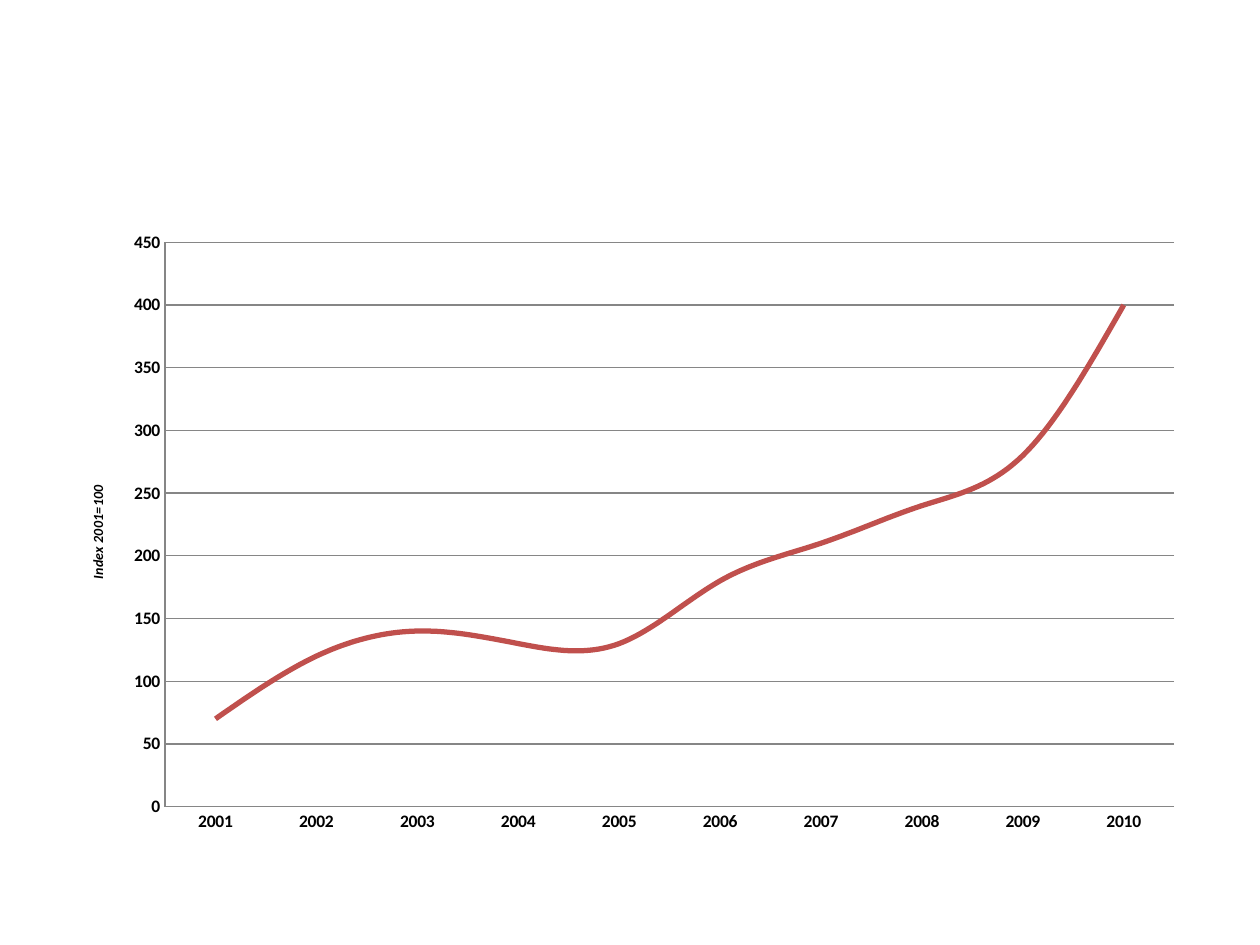
from lxml.etree import SubElement
from pptx import Presentation
from pptx.chart.data import CategoryChartData
from pptx.dml.color import RGBColor
from pptx.enum.chart import XL_CHART_TYPE, XL_TICK_MARK
from pptx.oxml.ns import qn
from pptx.util import Pt

COLORS = {"text": "000000", "grid": "868686", "index": "C0504D", "page": "FFFFFF"}
YEARS = [str(year) for year in range(2001, 2011)]
INDEX_VALUES = [70, 120, 140, 130, 130, 180, 210, 240, 280, 400]


def color(name):
    return RGBColor.from_string(COLORS[name])


def style_font(font, size, bold=False, italic=False):
    font.name = "Calibri"
    font.size = Pt(size)
    font.bold = bold
    font.italic = italic
    font.color.rgb = color("text")


def style_line(line, name, width):
    line.color.rgb = color(name)
    line.width = Pt(width)


def set_layout(element, **settings):
    """Fix the place of a chart part as fractions of the chart."""
    layout = element.find(qn("c:layout"))
    if layout is None:
        layout = SubElement(element, qn("c:layout"))
        element.insert(0, layout)
    for child in list(layout):
        layout.remove(child)
    manual = SubElement(layout, qn("c:manualLayout"))
    for tag, value in settings.items():
        SubElement(manual, qn(f"c:{tag}")).set("val", str(value))


def style_axis(axis):
    axis.major_tick_mark = XL_TICK_MARK.NONE
    axis.minor_tick_mark = XL_TICK_MARK.NONE
    style_font(axis.tick_labels.font, 10, bold=True)
    style_line(axis.format.line, "grid", 0.75)


def style_value_axis(axis):
    style_axis(axis)
    axis.minimum_scale, axis.maximum_scale, axis.major_unit = 0, 450, 50
    axis.has_major_gridlines = True
    style_line(axis.major_gridlines.format.line, "grid", 0.75)
    title = axis.axis_title
    span = title.text_frame.paragraphs[0].add_run()
    span.text = "Index 2001=100"
    style_font(span.font, 8, bold=True, italic=True)
    title.text_frame._txBody.bodyPr.set("rot", "-5400000")
    title.text_frame._txBody.bodyPr.set("vert", "horz")
    set_layout(title._element, xMode="edge", yMode="edge", x=0.02, y=0.42)


def add_index_chart(page, left, top, width, height):
    data = CategoryChartData()
    data.categories = YEARS
    data.add_series("Series 1", INDEX_VALUES)
    chart = page.shapes.add_chart(
        XL_CHART_TYPE.LINE, Pt(left), Pt(top), Pt(width), Pt(height), data
    ).chart
    style_font(chart.font, 18)
    chart.has_title = False
    chart.has_legend = False
    style_axis(chart.category_axis)
    style_value_axis(chart.value_axis)

    plot = chart.plots[0]
    plot.vary_by_categories = False
    series = plot.series[0]
    series.smooth = True
    style_line(series.format.line, "index", 3)

    plot_area = chart._chartSpace.chart.plotArea
    set_layout(plot_area, layoutTarget="inner", xMode="edge", yMode="edge",
               x=0.09, y=0.035, w=0.89, h=0.905)


def main():
    deck = Presentation()
    deck.slide_width, deck.slide_height = Pt(720), Pt(540)
    page = deck.slides.add_slide(deck.slide_layouts[6])
    page.background.fill.solid()
    page.background.fill.fore_color.rgb = color("page")
    add_index_chart(page, 36, 126, 648, 356.4)
    deck.save("out.pptx")


if __name__ == "__main__":
    main()
